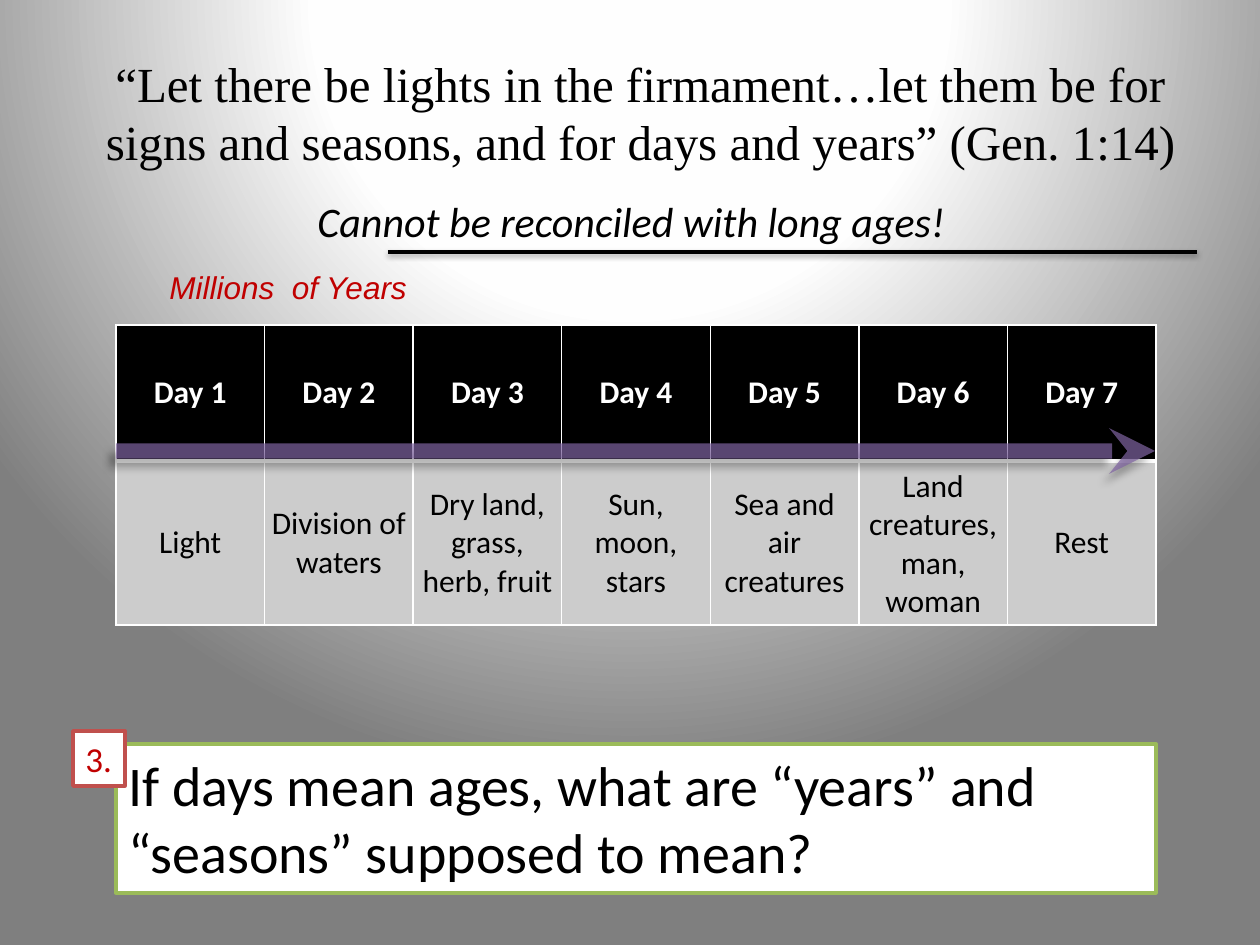
import pptx
import pptx.util
import pptx.dml.color
import pptx.enum.shapes
import pptx.enum.text
import pptx.oxml
import pptx.oxml.ns
from dataclasses import dataclass

PX_PER_INCH = 126
ALIGN = pptx.enum.text.PP_ALIGN
ANCHOR = pptx.enum.text.MSO_ANCHOR


@dataclass(frozen=True)
class Theme:
    black: str = "000000"
    white: str = "FFFFFF"
    grey: str = "CCCCCC"
    red: str = "C00000"
    red_line: str = "C0504D"
    green: str = "9BBB59"
    purple: str = "8064A2"
    backdrop: tuple = ((0, "FFFFFF"), (40, "FEFEFE"), (100, "7F7F7F"))
    body_font: str = "Calibri"
    title_font: str = "Times New Roman"
    label_font: str = "Arial"
    question: int = 32
    title: int = 28
    subtitle: int = 24
    number: int = 20
    small: int = 18


THEME = Theme()
DAYS = [
    ("Day 1", "Light"),
    ("Day 2", "Division of waters"),
    ("Day 3", "Dry land, grass, herb, fruit"),
    ("Day 4", "Sun, moon, stars"),
    ("Day 5", "Sea and air creatures"),
    ("Day 6", "Land creatures, man, woman"),
    ("Day 7", "Rest"),
]


def px(n):
    return pptx.util.Emu(round(n * 914400 / PX_PER_INCH))


def rgb(value):
    return pptx.dml.color.RGBColor.from_string(value)


def xml(text):
    """Build an element from markup that uses the a: and p: prefixes."""
    head, tail = text.split(">", 1)
    slash = "/" if head.endswith("/") else ""
    head = head.rstrip("/")
    return pptx.oxml.parse_xml(f"{head} {pptx.oxml.ns.nsdecls('a', 'p')}{slash}>{tail}")


def write(tf, text, size=THEME.small, font=THEME.body_font, color=THEME.black,
          bold=False, italic=False, align=ALIGN.LEFT):
    p = tf.paragraphs[0]
    p.alignment = align
    r = p.add_run()
    r.text = text
    r.font.size = pptx.util.Pt(size)
    r.font.name = font
    r.font.color.rgb = rgb(color)
    r.font.bold = bold
    r.font.italic = italic


def set_backdrop(s):
    stops = "".join(f'<a:gs pos="{pos * 1000}"><a:srgbClr val="{color}"/></a:gs>'
                    for pos, color in THEME.backdrop)
    s.element.cSld.insert(0, xml(
        f'<p:bg><p:bgPr><a:gradFill rotWithShape="1"><a:gsLst>{stops}</a:gsLst>'
        '<a:path path="circle"><a:fillToRect l="50000" t="-80000" r="50000" b="180000"/>'
        '</a:path></a:gradFill><a:effectLst/></p:bgPr></p:bg>'))


def add_text(s, box, text, anchor=ANCHOR.TOP, **style):
    sp = s.shapes.add_textbox(*map(px, box))
    tf = sp.text_frame
    tf.word_wrap = True
    tf.vertical_anchor = anchor
    write(tf, text, **style)


def add_framed_text(s, box, text, line, wrap=True, **style):
    sp = s.shapes.add_shape(pptx.enum.shapes.MSO_SHAPE.RECTANGLE, *map(px, box))
    sp.shadow.inherit = False
    sp.fill.solid()
    sp.fill.fore_color.rgb = rgb(THEME.white)
    sp.line.color.rgb = rgb(line)
    sp.line.width = pptx.util.Pt(2)
    tf = sp.text_frame
    tf.word_wrap = wrap
    tf.vertical_anchor = ANCHOR.TOP
    write(tf, text, **style)


def add_line(s, x1, x2, y, color, width, shadow, alpha=100, arrow=False):
    """Horizontal rule; shadow is opacity %, blur pt, distance pt, angle."""
    c = s.shapes.add_connector(pptx.enum.shapes.MSO_CONNECTOR.STRAIGHT,
                               px(x1), px(y), px(x2), px(y))
    c.line.color.rgb = rgb(color)
    c.line.width = pptx.util.Pt(width)
    ln = c.line._get_or_add_ln()
    if alpha < 100:
        ln.find(".//" + pptx.oxml.ns.qn("a:srgbClr")).append(
            xml(f'<a:alpha val="{alpha * 1000}"/>'))
    if arrow:
        ln.append(xml('<a:tailEnd type="stealth"/>'))
    opacity, blur, dist, angle = shadow
    c._element.spPr.append(xml(
        f'<a:effectLst><a:outerShdw blurRad="{pptx.util.Pt(blur)}" '
        f'dist="{pptx.util.Pt(dist)}" dir="{angle * 60000}" rotWithShape="0">'
        f'<a:srgbClr val="{THEME.black}"><a:alpha val="{opacity * 1000}"/></a:srgbClr>'
        '</a:outerShdw></a:effectLst>'))


def set_borders(cell, **widths):
    tcPr = cell._tc.get_or_add_tcPr()
    for i, side in enumerate("LRTB"):
        width = pptx.util.Pt(widths.get(side, 1))
        tcPr.insert(i, xml(f'<a:ln{side} w="{width}"><a:solidFill>'
                           f'<a:srgbClr val="{THEME.white}"/></a:solidFill></a:ln{side}>'))


def add_days_table(s, box, row_heights):
    table = s.shapes.add_table(2, len(DAYS), *map(px, box)).table
    for row, height in zip(table.rows, row_heights):
        row.height = px(height)
    for col, texts in enumerate(DAYS):
        table.columns[col].width = px(box[2] / len(DAYS))
        for row, text in enumerate(texts):
            header = row == 0
            cell = table.cell(row, col)
            cell.fill.solid()
            cell.fill.fore_color.rgb = rgb(THEME.black if header else THEME.grey)
            cell.vertical_anchor = ANCHOR.MIDDLE
            cell.margin_left = cell.margin_right = pptx.util.Inches(0.05)
            cell.margin_top = cell.margin_bottom = pptx.util.Inches(0.05)
            set_borders(cell, **({"B": 3} if header else {"T": 3}))
            write(cell.text_frame, text, bold=header, align=ALIGN.CENTER,
                  color=THEME.white if header else THEME.black)


def main():
    prs = pptx.Presentation()
    prs.slide_width, prs.slide_height = px(1260), px(945)
    s = prs.slides.add_slide(prs.slide_layouts[6])
    set_backdrop(s)

    # Heading
    add_line(s, 388, 1197, 252, THEME.black, 2, shadow=(38, 3.1, 1.6, 90))
    add_text(s, (84, 10, 1113, 204),
             "“Let there be lights in the firmament…let them be for signs and seasons, "
             "and for days and years” (Gen. 1:14)",
             anchor=ANCHOR.MIDDLE, size=THEME.title, font=THEME.title_font,
             align=ALIGN.CENTER)

    # Question
    add_framed_text(s, (116, 744, 1040, 149),
                    "If days mean ages, what are “years” and “seasons” supposed to mean?",
                    THEME.green, size=THEME.question)

    # Creation week with its time arrow
    add_days_table(s, (116, 325, 1040, 300), (136, 164))
    add_text(s, (305, 189, 662, 63), "Cannot be reconciled with long ages!",
             size=THEME.subtitle, italic=True)
    add_line(s, 116, 1155, 451, THEME.purple, 8.75, shadow=(40, 4, 6, 135),
             alpha=70, arrow=True)
    add_text(s, (157, 262, 924, 62), "Millions  of Years",
             font=THEME.label_font, color=THEME.red, italic=True)

    # Question number
    add_framed_text(s, (73, 731, 52, 55), "3.", THEME.red_line, wrap=False,
                    size=THEME.number, color=THEME.red)

    prs.save("out.pptx")


if __name__ == "__main__":
    main()
